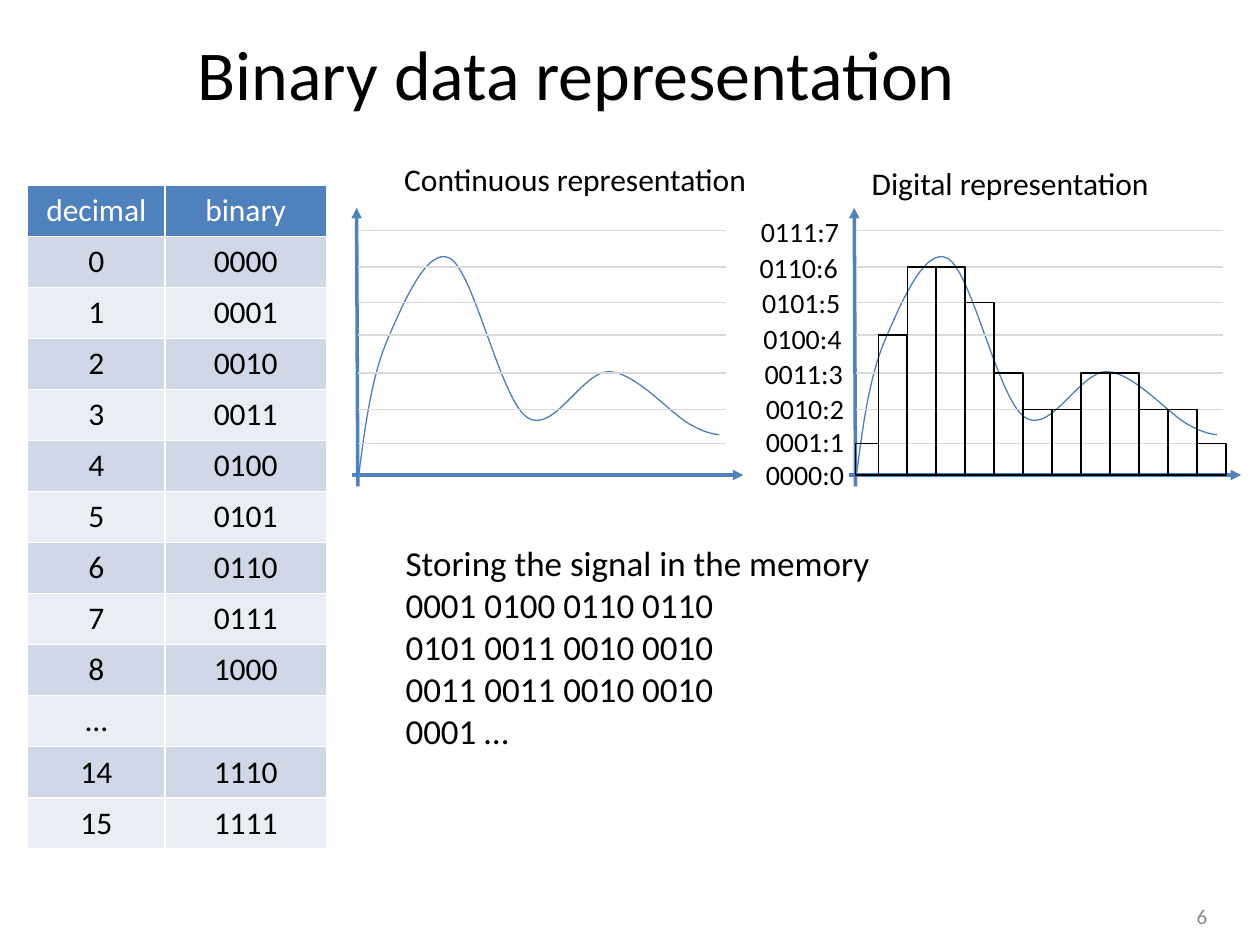
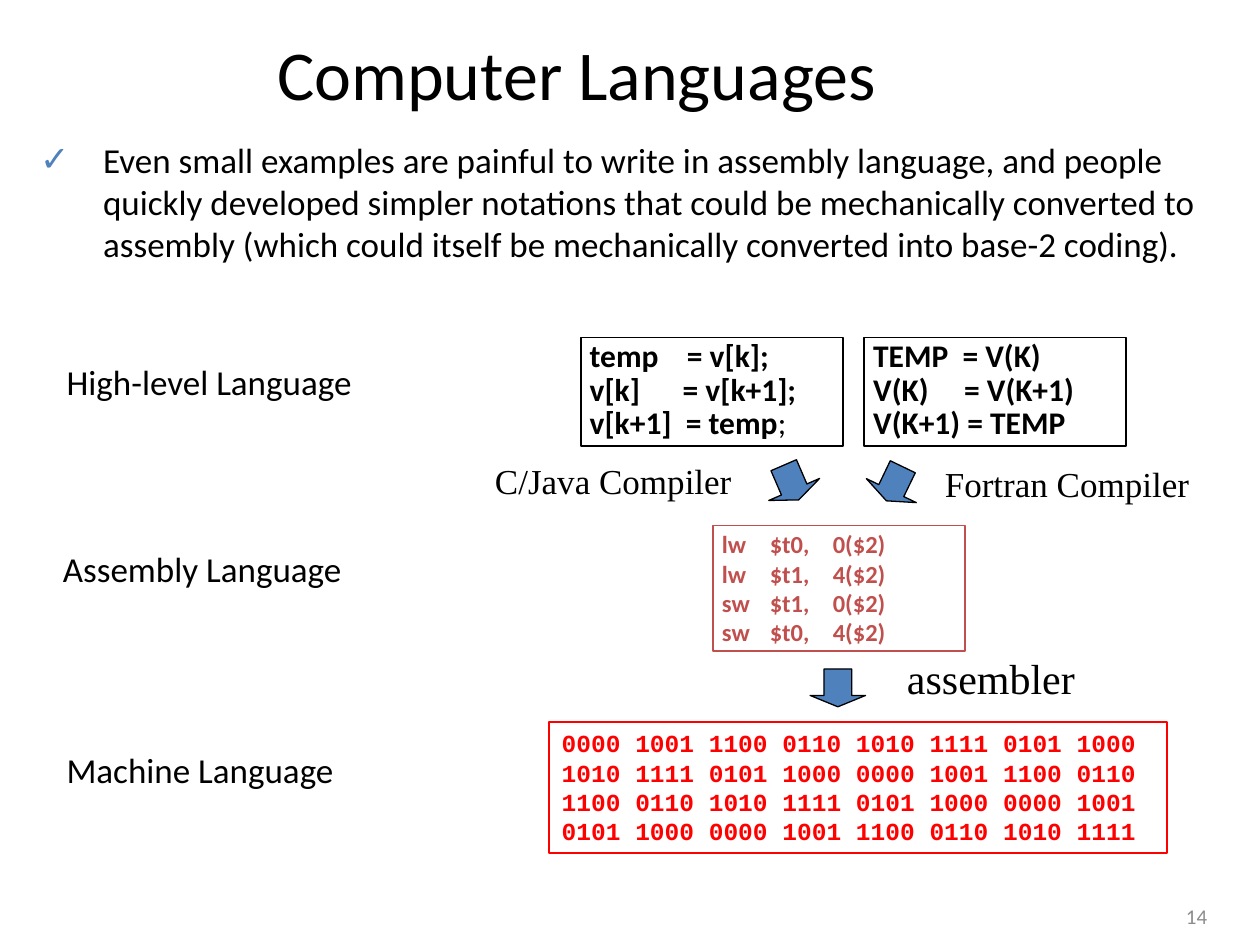
import pptx
import pptx.util
import pptx.dml.color
import pptx.enum.shapes
import pptx.enum.text
from lxml import etree
from pptx.oxml.ns import qn

Inches, Pt = pptx.util.Inches, pptx.util.Pt
RGBColor = pptx.dml.color.RGBColor
MSO_SHAPE = pptx.enum.shapes.MSO_SHAPE
PP_ALIGN, MSO_ANCHOR = pptx.enum.text.PP_ALIGN, pptx.enum.text.MSO_ANCHOR

BLACK = RGBColor(0x00, 0x00, 0x00)
WHITE = RGBColor(0xFF, 0xFF, 0xFF)
BLUE = RGBColor(0x4F, 0x81, 0xBD)
CURVE_BLUE = RGBColor(0x4B, 0x7E, 0xBC)
BAND_DARK = RGBColor(0xD0, 0xD8, 0xE8)
BAND_LIGHT = RGBColor(0xE9, 0xED, 0xF4)
GRID_GRAY = RGBColor(0xD9, 0xD9, 0xD9)
NUMBER_GRAY = RGBColor(0x8C, 0x8C, 0x8C)
BRICK = RGBColor(0xC0, 0x50, 0x4D)
RED = RGBColor(0xFF, 0x00, 0x00)
SANS, SERIF, MONO = "Calibri", "Times New Roman", "Courier New"

# Slide 1 content
NUMBERS = [
    ("decimal", "binary"), ("0", "0000"), ("1", "0001"), ("2", "0010"),
    ("3", "0011"), ("4", "0100"), ("5", "0101"), ("6", "0110"),
    ("7", "0111"), ("8", "1000"), ("…", ""), ("14", "1110"), ("15", "1111"),
]
MEMORY = ["0001 0100 0110 0110", "0101 0011 0010 0010",
          "0011 0011 0010 0010", "0001 …"]
# Level label, its left and top, and the height of its grid line
LEVELS = [
    ("0000:0", 5.98, 3.58, 3.77), ("0001:1", 5.98, 3.32, 3.52),
    ("0010:2", 5.98, 3.06, 3.25), ("0011:3", 5.97, 2.78, 2.96),
    ("0100:4", 5.96, 2.50, 2.66), ("0101:5", 5.95, 2.22, 2.40),
    ("0110:6", 5.93, 1.94, 2.12), ("0111:7", 5.94, 1.65, 1.83),
]
# Signal as a start point and chained cubic curves, relative to the axis
SIGNAL_START = (0.01, 3.75)
SIGNAL = [
    ((0.06, 3.37), (0.11, 3.00), (0.23, 2.71)),
    ((0.35, 2.43), (0.55, 1.95), (0.73, 2.05)),
    ((0.92, 2.15), (1.13, 3.16), (1.34, 3.31)),
    ((1.55, 3.46), (1.78, 2.94), (2.00, 2.95)),
    ((2.21, 2.96), (2.49, 3.29), (2.64, 3.37)),
    ((2.78, 3.45), (2.87, 3.45), (2.87, 3.45)),
]
CONTINUOUS_X, DIGITAL_X = 2.84, 6.79

# Slide 2 content
INTRO = ("Even small examples are painful to write in assembly language, and "
         "people quickly developed simpler notations that could be mechanically "
         "converted to assembly (which could itself be mechanically converted "
         "into base-2 coding).")
C_CODE = ["temp    = v[k];", "v[k]      = v[k+1];", "v[k+1]  = temp"]
FORTRAN_CODE = ["TEMP  = V(K)", "V(K)     = V(K+1)", "V(K+1) = TEMP"]
ASSEMBLY_CODE = ["lw\t$t0,\t0($2)", "lw\t$t1,\t4($2)",
                 "sw\t$t1,\t0($2)", "sw\t$t0,\t4($2)"]
MACHINE_CODE = ["0000 1001 1100 0110 1010 1111 0101 1000",
                "1010 1111 0101 1000 0000 1001 1100 0110",
                "1100 0110 1010 1111 0101 1000 0000 1001",
                "0101 1000 0000 1001 1100 0110 1010 1111"]
LABELS = [  # text, box, size, font
    ("High-level Language", (0.43, 2.81, 3.08, 0.44), 20, SANS),
    ("Assembly Language", (0.40, 4.30, 3.58, 0.44), 20, SANS),
    ("Machine Language", (0.43, 5.89, 2.83, 0.44), 20, SANS),
    ("C/Java Compiler", (3.83, 3.60, 2.25, 0.43), 20, SERIF),
    ("Fortran Compiler", (7.40, 3.62, 2.25, 0.43), 20, SERIF),
    ("assembler", (7.10, 5.13, 2.50, 0.50), 24, SERIF),
]
ARROWS = [(6.06, 3.68, 336.6), (6.43, 5.31, 0), (6.88, 3.69, 25.7)]


def inches(values):
    return [Inches(v) for v in values]


def add_run(p, text, size, color=BLACK, font=SANS, bold=False):
    r = p.add_run()
    r.text = text
    r.font.size, r.font.name, r.font.bold = Pt(size), font, bold
    r.font.color.rgb = color


def write(sp, lines, size, color=BLACK, font=SANS, bold=False,
          align=PP_ALIGN.LEFT, anchor=MSO_ANCHOR.TOP):
    tf = sp.text_frame
    tf.word_wrap, tf.vertical_anchor = True, anchor
    for i, line in enumerate(lines):
        p = tf.add_paragraph() if i else tf.paragraphs[0]
        p.alignment = align
        add_run(p, line, size, color, font, bold)
    return tf


def add_text(s, box, lines, size, **style):
    return write(s.shapes.add_textbox(*inches(box)), lines, size, **style)


def add_shape(s, kind, box, line, width, fill=None):
    sp = s.shapes.add_shape(kind, *inches(box))
    sp.shadow.inherit = False
    if fill is None:
        sp.fill.background()
    else:
        sp.fill.solid()
        sp.fill.fore_color.rgb = fill
    sp.line.color.rgb, sp.line.width = line, Pt(width)
    return sp


def add_line(s, start, end, color, width, arrow=False):
    c = s.shapes.add_connector(pptx.enum.shapes.MSO_CONNECTOR.STRAIGHT,
                               *inches(start + end))
    c.line.color.rgb, c.line.width = color, Pt(width)
    if arrow:
        etree.SubElement(c.line._get_or_add_ln(), qn("a:tailEnd"), type="triangle")
    etree.SubElement(c._element.spPr, qn("a:effectLst"))


def set_indent(p, left):
    pPr = p._p.get_or_add_pPr()
    pPr.set("marL", str(Inches(left)))
    pPr.set("indent", str(-Inches(left)))
    return pPr


def new_slide(prs, title, number):
    s = prs.slides.add_slide(prs.slide_layouts[6])
    add_text(s, (0.22, 0.27, 8.71, 0.61), [title], 40,
             align=PP_ALIGN.CENTER, anchor=MSO_ANCHOR.MIDDLE)
    add_text(s, (7.35, 7.07, 2.33, 0.4), [number], 12, color=NUMBER_GRAY,
             align=PP_ALIGN.RIGHT, anchor=MSO_ANCHOR.MIDDLE)
    return s


def set_borders(cell):
    tcPr = cell._tc.get_or_add_tcPr()
    for i, tag in enumerate(("a:lnL", "a:lnR", "a:lnT", "a:lnB")):
        ln = etree.Element(qn(tag), w=str(Pt(1)))
        fill = etree.SubElement(ln, qn("a:solidFill"))
        etree.SubElement(fill, qn("a:srgbClr"), val=str(WHITE))
        tcPr.insert(i, ln)


def add_number_table(s):
    box = inches((0.22, 1.47, 2.37, 5.27))
    table = s.shapes.add_table(len(NUMBERS), 2, *box).table
    table.columns[0].width, table.columns[1].width = inches((1.09, 1.28))
    for i, row in enumerate(NUMBERS):
        fill = BLUE if i == 0 else BAND_DARK if i % 2 else BAND_LIGHT
        for j, text in enumerate(row):
            cell = table.cell(i, j)
            cell.fill.solid()
            cell.fill.fore_color.rgb = fill
            set_borders(cell)
            p = cell.text_frame.paragraphs[0]
            p.alignment = PP_ALIGN.CENTER
            if text:
                add_run(p, text, 18, BLACK if i else WHITE)


def add_signal(s, x):
    ends = [inches((x + curve[-1][0], curve[-1][1])) for curve in SIGNAL]
    fb = s.shapes.build_freeform(*inches((x + SIGNAL_START[0], SIGNAL_START[1])))
    fb.add_line_segments(ends, close=False)
    sp = fb.convert_to_shape()
    sp.shadow.inherit = False
    sp.fill.background()
    sp.line.color.rgb, sp.line.width = CURVE_BLUE, Pt(0.75)
    # Turn each straight segment into a cubic curve
    for segment, curve in zip(list(sp._element.iter(qn("a:lnTo"))), SIGNAL):
        cubic = etree.Element(qn("a:cubicBezTo"))
        for px, py in curve:
            etree.SubElement(cubic, qn("a:pt"), x=str(Inches(x + px) - sp.left),
                             y=str(Inches(py) - sp.top))
        segment.getparent().replace(segment, cubic)


def add_plot(s, x):
    base = LEVELS[0][3]
    add_line(s, (x, 3.86), (x - 0.01, 1.65), BLUE, 2, arrow=True)
    add_line(s, (x - 0.05, base), (x + 3.06, base), BLUE, 2, arrow=True)
    add_signal(s, x)
    for *_, y in LEVELS[1:]:
        add_line(s, (x, y), (x + 2.92, y), GRID_GRAY, 1)


def add_samples(s, x):
    base, pitch, first = LEVELS[0][3], 0.23, 0.18
    words = [w for w in " ".join(MEMORY).split() if w != "…"]
    for i, word in enumerate(words):
        top = LEVELS[int(word, 2)][3]
        left = x + first + (i - 1) * pitch if i else x
        add_shape(s, MSO_SHAPE.RECTANGLE,
                  (left, top, pitch if i else first, base - top), BLACK, 0.75)


def build_binary_slide(prs):
    s = new_slide(prs, "Binary data representation", "6")
    add_number_table(s)
    add_text(s, (3.11, 1.22, 3.69, 0.4), ["Continuous representation"], 18)
    add_text(s, (6.82, 1.25, 3.1, 0.4), ["Digital representation"], 18)
    add_text(s, (3.12, 4.25, 6.58, 2.52),
             ["Storing the signal in the memory"] + MEMORY, 20)
    for x in (CONTINUOUS_X, DIGITAL_X):
        add_plot(s, x)
    add_samples(s, DIGITAL_X)
    for label, left, top, _ in LEVELS:
        add_text(s, (left, top, 0.9, 0.37), [label], 16)


def add_code(s, box, lines, size, color=BLACK, spacing=None, tab=None):
    sp = add_shape(s, MSO_SHAPE.RECTANGLE, box, color, 1)
    tf = write(sp, lines, size, color=color, bold=True)
    tf.margin_left = tf.margin_right = Inches(0.07)
    tf.margin_top = tf.margin_bottom = Inches(0.03)
    for p in tf.paragraphs:
        pPr = set_indent(p, 0.38)
        if spacing:
            p.line_spacing = spacing
        if tab:
            tabs = etree.SubElement(pPr, qn("a:tabLst"))
            etree.SubElement(tabs, qn("a:tab"), pos=str(Inches(tab)), algn="l")
    return tf


def build_languages_slide(prs):
    s = new_slide(prs, "Computer Languages", "14")

    # Bulleted introduction
    tf = add_text(s, (0.22, 1.05, 9.46, 5.75), [INTRO], 20)
    pPr = set_indent(tf.paragraphs[0], 0.5)
    bullet_color = etree.SubElement(pPr, qn("a:buClr"))
    etree.SubElement(bullet_color, qn("a:srgbClr"), val=str(BLUE))
    etree.SubElement(pPr, qn("a:buFont"), typeface=SANS)
    etree.SubElement(pPr, qn("a:buChar"), char="✓")

    # Code at each language level
    tf = add_code(s, (4.61, 2.68, 2.08, 0.86), C_CODE, 18, spacing=0.88)
    add_run(tf.paragraphs[-1], ";", 18)
    add_code(s, (5.66, 4.17, 2, 1), ASSEMBLY_CODE, 14, BRICK, tab=1.17)
    machine = add_shape(s, MSO_SHAPE.RECTANGLE, (4.36, 5.73, 4.9, 1.04), RED, 1)
    write(machine, MACHINE_CODE, 14, color=RED, font=MONO, bold=True)
    add_code(s, (6.86, 2.68, 2.08, 0.86), FORTRAN_CODE, 18, spacing=0.88)

    # Labels and translation arrows
    for text, box, size, font in LABELS:
        add_text(s, box, [text], size, font=font)
    for left, top, angle in ARROWS:
        sp = add_shape(s, MSO_SHAPE.DOWN_ARROW, (left, top, 0.44, 0.3), BLACK, 0.75, BLUE)
        sp.adjustments[0], sp.adjustments[1] = 0.5, 0.3
        sp.rotation = angle


def main():
    prs = pptx.Presentation()
    prs.slide_width, prs.slide_height = inches((10, 7.5))
    build_binary_slide(prs)
    build_languages_slide(prs)
    prs.save("out.pptx")


if __name__ == "__main__":
    main()
